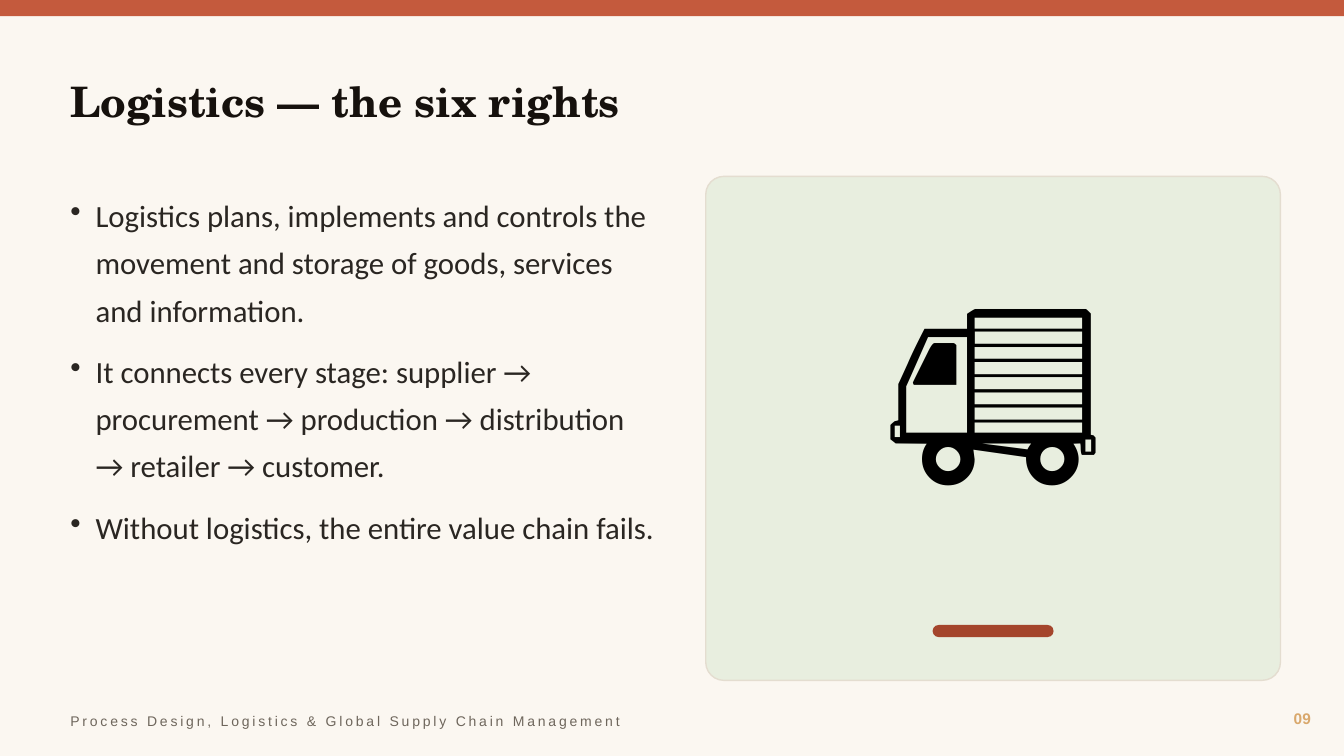
from lxml import etree
from pptx import Presentation, util as u
from pptx.dml.color import RGBColor
from pptx.enum import shapes, text
from pptx.oxml.ns import qn

PX = 9144  # 100 px to the inch
C = {"paper": "FBF7F1", "bar": "C45A3D", "ink": "16110D", "body": "2A2622",
     "card": "E8EEDF", "edge": "E4DDD0", "accent": "A4452C",
     "icon": "000000", "number": "D9A86C", "footer": "6E665C"}
SHAPE = shapes.MSO_SHAPE
MIDDLE = text.MSO_ANCHOR.MIDDLE

prs = Presentation()
prs.slide_width, prs.slide_height = 1333 * PX, 750 * PX
s = prs.slides.add_slide(prs.slide_layouts[6])
s.background.fill.solid()
s.background.fill.fore_color.rgb = RGBColor.from_string(C["paper"])


def add_block(kind, box, fill, line=None, radius=None):
    sp = s.shapes.add_shape(kind, *(v * PX for v in box))
    sp.shadow.inherit = False
    sp.fill.solid()
    sp.fill.fore_color.rgb = RGBColor.from_string(C[fill])
    if line:
        sp.line.color.rgb = RGBColor.from_string(C[line])
        sp.line.width = u.Pt(1)
    else:
        sp.line.fill.background()
    if radius is not None:
        # corner radius in px, as a share of the shorter side
        sp.adjustments[0] = radius / min(box[2:])


def add_text(box, lines, size, color, font="Calibri", bold=False, align=None,
             anchor=MIDDLE, bullet=None, leading=None, after=None, tracking=None):
    tf = s.shapes.add_textbox(*(v * PX for v in box)).text_frame
    tf.word_wrap = True
    tf.vertical_anchor = anchor
    for i, line in enumerate(lines):
        p = tf.add_paragraph() if i else tf.paragraphs[0]
        if bullet:
            pPr = p._p.get_or_add_pPr()
            pPr.set("marL", str(25 * PX))
            pPr.set("indent", str(-25 * PX))
            etree.SubElement(pPr, qn("a:buChar")).set("char", bullet)
        p.alignment = align
        p.line_spacing = leading
        if after:
            p.space_after = u.Pt(after)
        r = p.add_run()
        r.text = line
        r.font.name, r.font.size, r.font.bold = font, u.Pt(size), bold
        r.font.color.rgb = RGBColor.from_string(C[color])
        if tracking:
            r._r.get_or_add_rPr().set("spc", str(tracking * 100))


# Top bar and title
add_block(SHAPE.RECTANGLE, (0, 0, 1333, 16), "bar")
add_text((60, 50, 1210, 100), ["Logistics — the six rights"], 30, "ink",
         font="TeX Gyre Schola", bold=True)

# Truck card
add_block(SHAPE.ROUNDED_RECTANGLE, (700, 175, 570, 500), "card", line="edge", radius=18)
add_text((700, 175, 570, 410), ["🚚"], 150, "icon", align=text.PP_ALIGN.CENTER)
add_block(SHAPE.ROUNDED_RECTANGLE, (925, 620, 120, 12), "accent", radius=6)

# Bullets
add_text((60, 180, 600, 500), [
    "Logistics plans, implements and controls the movement and storage of goods, "
    "services and information.",
    "It connects every stage: supplier → procurement → production → distribution "
    "→ retailer → customer.",
    "Without logistics, the entire value chain fails.",
], 22, "body", anchor=text.MSO_ANCHOR.TOP, bullet="•", leading=1.28, after=10)

# Page number and footer
add_text((1220, 695, 90, 35), ["09"], 11, "number", font="Arial", bold=True,
         align=text.PP_ALIGN.RIGHT)
add_text((60, 700, 800, 30), ["Process Design, Logistics & Global Supply Chain Management"],
         10, "footer", font="Arial", tracking=2)

prs.save("out.pptx")
